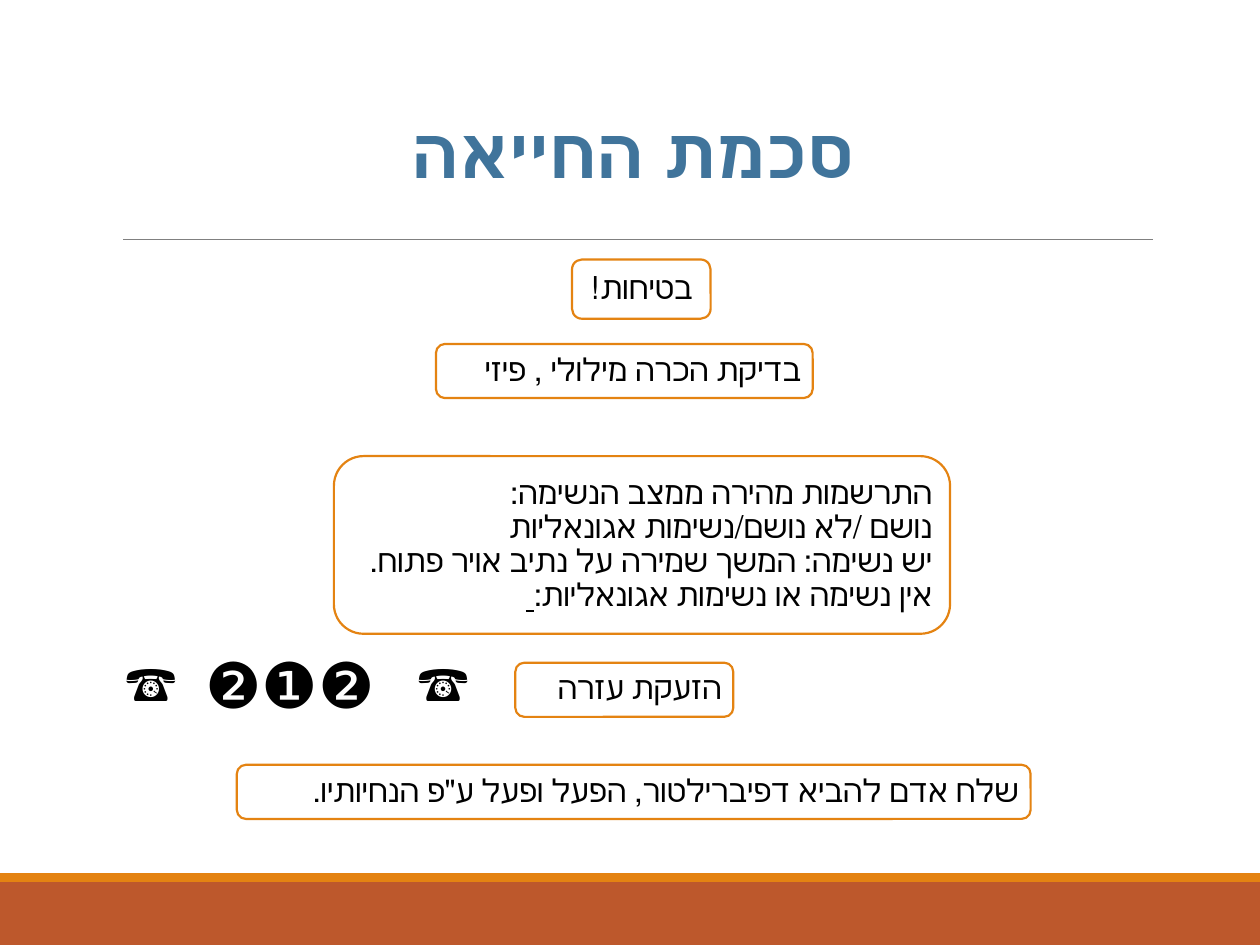
from dataclasses import dataclass

import pptx
import pptx.dml.color
import pptx.enum.shapes
import pptx.enum.text
import pptx.util
from lxml import etree

Inches = pptx.util.Inches
Pt = pptx.util.Pt
Color = pptx.dml.color.RGBColor
Align = pptx.enum.text.PP_ALIGN
Anchor = pptx.enum.text.MSO_ANCHOR
Shape = pptx.enum.shapes.MSO_SHAPE
DRAWING = "{http://schemas.openxmlformats.org/drawingml/2006/main}"


@dataclass(frozen=True)
class Theme:
    heading: Color = Color(0x40, 0x74, 0x9B)
    text: Color = Color(0, 0, 0)
    paper: Color = Color(255, 255, 255)
    accent: Color = Color(0xE4, 0x83, 0x12)
    footer: Color = Color(0xBD, 0x58, 0x2C)
    rule: Color = Color(0x80, 0x80, 0x80)
    body_font: str = "Calibri"
    symbol_font: str = "Arial"
    heading_size: int = 40
    body_size: int = 18
    phone_size: int = 28
    digit_size: int = 36


class SlideBuilder:
    def __init__(self, slide, theme):
        self.slide = slide
        self.theme = theme

    def format(self, paragraph, font, size, color, align=Align.LEFT, spacing=None, bold=None):
        paragraph.alignment = align
        paragraph.font.name = font
        paragraph.font.size = Pt(size)
        paragraph.font.color.rgb = color
        paragraph.font.bold = bold
        if spacing:
            paragraph.line_spacing = spacing
            paragraph._p.get_or_add_pPr().set("rtl", "1")

    def place(self, shape, left, top, width, height):
        shape.left, shape.top = Inches(left), Inches(top)
        shape.width, shape.height = Inches(width), Inches(height)

    def title(self, text, *box):
        shape = self.slide.shapes.title
        self.place(shape, *box)
        frame = shape.text_frame
        frame.text = text
        frame.vertical_anchor = Anchor.BOTTOM
        self.format(frame.paragraphs[0], self.theme.body_font, self.theme.heading_size,
                    self.theme.heading, Align.CENTER, 0.85, True)

    def band(self, color, top, height):
        shape = self.slide.shapes.add_shape(
            Shape.RECTANGLE, 0, Inches(top), Inches(10), Inches(height))
        shape.shadow.inherit = False
        shape.fill.solid()
        shape.fill.fore_color.rgb = color
        shape.line.fill.background()

    def rule(self, left, right, y):
        line = self.slide.shapes.add_connector(
            pptx.enum.shapes.MSO_CONNECTOR.STRAIGHT,
            Inches(left), Inches(y), Inches(right), Inches(y))
        line.line.color.rgb = self.theme.rule
        line.line.width = Pt(0.5)
        etree.SubElement(line._element.spPr, DRAWING + "effectLst")

    def step(self, text, left, top, width, height, align=Align.RIGHT, underlined=None):
        shape = self.slide.shapes.add_shape(
            Shape.ROUNDED_RECTANGLE, Inches(left), Inches(top), Inches(width), Inches(height))
        shape.shadow.inherit = False
        shape.fill.solid()
        shape.fill.fore_color.rgb = self.theme.paper
        shape.line.color.rgb = self.theme.accent
        shape.line.width = Pt(1.25)
        frame = shape.text_frame
        frame.word_wrap = True
        frame.vertical_anchor = Anchor.MIDDLE
        frame.margin_left = frame.margin_right = Inches(0.07)
        frame.margin_top = frame.margin_bottom = Inches(0.07)
        paragraph = frame.paragraphs[0]
        paragraph.text = text
        if underlined:
            run = paragraph.add_run()
            run.text = underlined
            run.font.underline = True
        self.format(paragraph, self.theme.body_font, self.theme.body_size,
                    self.theme.text, align, 0.9)

    def symbols(self, text, size, left, top, width, height):
        box = self.slide.shapes.add_textbox(
            Inches(left), Inches(top), Inches(width), Inches(height))
        frame = box.text_frame
        frame.word_wrap = True
        frame.vertical_anchor = Anchor.MIDDLE
        frame.text = text
        self.format(frame.paragraphs[0], self.theme.symbol_font, size, self.theme.text)


def main():
    presentation = pptx.Presentation()
    presentation.slide_width, presentation.slide_height = Inches(10), Inches(7.5)
    slide = presentation.slides.add_slide(presentation.slide_layouts[5])
    theme = Theme()
    builder = SlideBuilder(slide, theme)

    builder.band(theme.footer, 7, 0.5)
    builder.band(theme.accent, 6.93, 0.07)
    builder.rule(0.98, 9.15, 1.9)
    builder.title("סכמת החייאה", 0.9, 0.44, 8.25, 1.14)

    for left in (3.22, 0.9):
        builder.symbols("☎", theme.phone_size, left, 5.13, 0.73, 0.57)
    builder.symbols("❷❶❷", theme.digit_size, 1.53, 5.07, 1.73, 0.7)

    builder.step("בטיחות!", 4.54, 2.06, 1.1, 0.47, Align.CENTER)
    builder.step("בדיקת הכרה מילולי , פיזי ", 3.46, 2.73, 2.99, 0.43)
    builder.step(
        "התרשמות מהירה ממצב הנשימה:\n"
        "נושם /לא נושם/נשימות אגונאליות\n"
        "יש נשימה: המשך שמירה על נתיב אויר פתוח.\n"
        "אין נשימה או נשימות אגונאליות:",
        2.65, 3.62, 4.89, 1.41, underlined=" ")
    builder.step("הזעקת עזרה", 4.09, 5.26, 1.73, 0.43)
    builder.step('שלח אדם להביא דפיברילטור, הפעל ופעל ע"פ הנחיותיו.', 1.88, 6.07, 6.3, 0.43)

    presentation.save("out.pptx")


if __name__ == "__main__":
    main()
